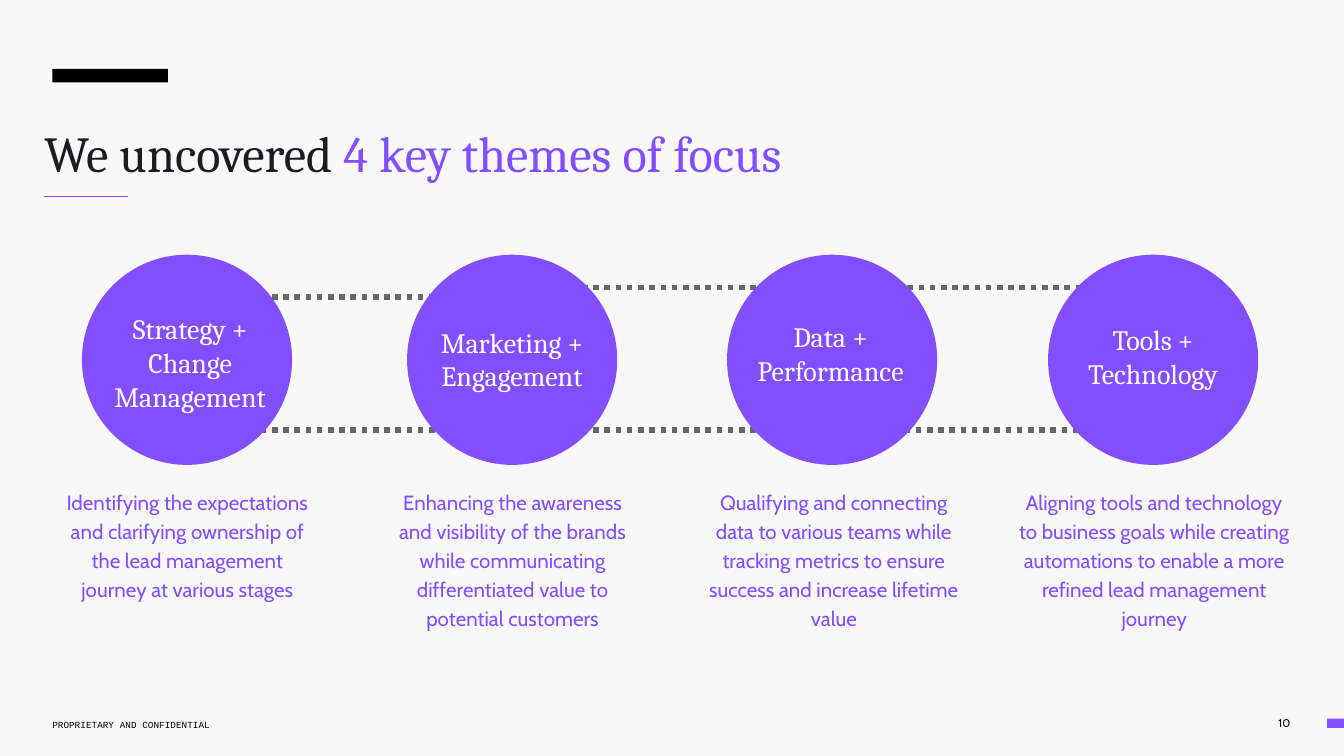
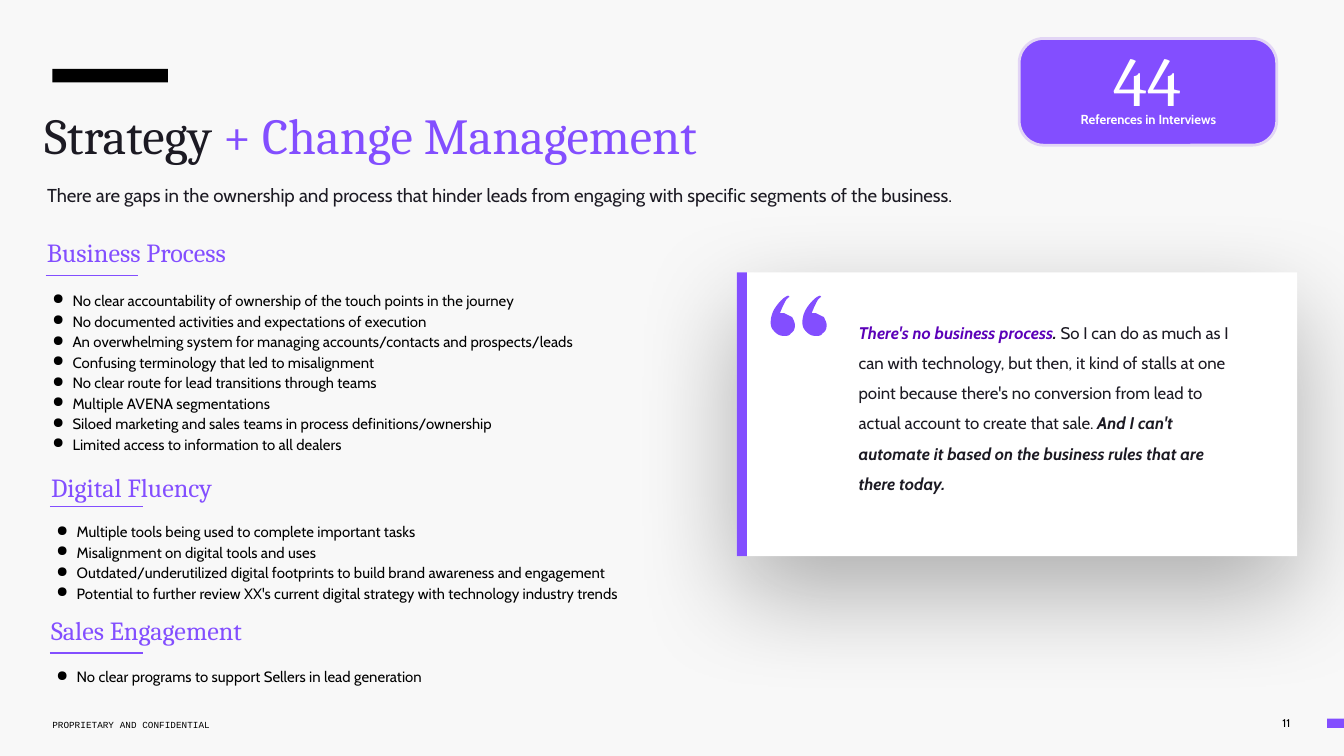
from dataclasses import dataclass, field
from typing import NamedTuple, Optional

from lxml import etree
from pptx import Presentation
from pptx import util as u
from pptx.dml.color import RGBColor
from pptx.enum import dml, shapes, text
from pptx.oxml import ns

Pt = u.Pt
SHAPE = shapes.MSO_SHAPE
ALIGN = text.PP_ALIGN


@dataclass(frozen=True)
class Theme:
    """Colours, fonts and type sizes of the deck."""
    paper: str = "F8F8F8"
    white: str = "FFFFFF"
    black: str = "000000"
    ink: str = "1C1A23"
    violet: str = "834EFF"
    deep_violet: str = "5B00B8"
    pale_violet: str = "E2D5F5"
    grey: str = "666666"
    serif: str = "Cambria"
    sans: str = "Cabin"
    mono: str = "Courier New"
    count: float = 37
    title: float = 27
    theme_name: float = 15
    heading: float = 14
    caption: float = 11
    lead: float = 10
    quote: float = 9
    bullet: float = 8
    badge: float = 7
    page: float = 6
    footer: float = 5


T = Theme()


class Box(NamedTuple):
    left: float
    top: float
    width: float
    height: float


class Run(NamedTuple):
    words: str
    size: float
    color: str
    font: str = T.sans
    strong: bool = False
    slanted: bool = False


@dataclass(frozen=True)
class Layout:
    """How the text sits in its box."""
    spacing: float = 1.0
    align: ALIGN = ALIGN.LEFT
    inset: tuple = (0, 0, 0, 0)
    anchor: text.MSO_ANCHOR = text.MSO_ANCHOR.TOP
    bullets: bool = False


SNUG = (2.88,) * 4
ROOMY = (7.2,) * 4


@dataclass(frozen=True)
class FocusTheme:
    name: str
    label: Box
    circle_left: float
    caption: str
    caption_left: float
    caption_width: float = 136.1


@dataclass(frozen=True)
class Section:
    heading: str
    left: float
    top: float
    rule_y: float
    list_top: float
    list_height: float
    points: list = field(default_factory=list)


FOCUS_THEMES = [
    FocusTheme("Strategy + Change Management", Box(50.4, 164.2, 103, 41.8), 45.4,
               "Identifying the expectations and clarifying ownership of the lead "
               "management journey at various stages", 32.4),
    FocusTheme("Marketing + Engagement", Box(220.3, 171.4, 108, 46.8), 219.6,
               "Enhancing the awareness and visibility of the brands while communicating "
               "differentiated value to potential customers", 206.6),
    FocusTheme("Data + Performance", Box(392.4, 168.5, 105.1, 46.8), 391,
               "Qualifying and connecting data to various teams while tracking metrics to "
               "ensure success and increase lifetime value", 378.7),
    FocusTheme("Tools + Technology", Box(569.5, 169.9, 96.5, 65.5), 563,
               "Aligning tools and technology to business goals while creating automations "
               "to enable a more refined lead management journey", 545, 146.9),
]

# Dotted links between circles: start x, end x, y
DOTTED_LINKS = [
    (311.8, 579.6, 154.1), (484.6, 579.6, 230.4), (139.7, 234.7, 159.1),
    (139.7, 234.7, 230.4), (311.8, 406.8, 230.4),
]

SECTIONS = [
    Section("Business Process", 22.3, 121, 147.6, 151.9, 92.9, [
        "No clear accountability of ownership of the touch points in the journey",
        "No documented activities and expectations of execution",
        "An overwhelming system for managing accounts/contacts and prospects/leads",
        "Confusing terminology that led to misalignment",
        "No clear route for lead transitions through teams",
        "Multiple AVENA segmentations",
        "Siloed marketing and sales teams in process definitions/ownership",
        "Limited access to information to all dealers",
    ]),
    Section("Digital Fluency", 24.5, 247, 271.4, 275.8, 48.2, [
        "Multiple tools being used to complete important tasks",
        "Misalignment on digital tools and uses",
        "Outdated/underutilized digital footprints to build brand awareness and engagement",
        "Potential to further review XX's current digital strategy with technology industry trends",
    ]),
    Section("Sales Engagement", 24.5, 324, 349.9, 353.5, 15.1, [
        "No clear programs to support Sellers in lead generation",
    ]),
]

# One quotation mark in points: start, then cubic curves (six numbers) and lines (two)
MARK_START = (9.4, 0)
MARK_OUTLINE = [
    (7.2, 0.7, 5, 2.9, 2.9, 5.8), (1.4, 7.9, 0, 10.8, 0, 14.4),
    (0, 16.6, 0.7, 18, 2.2, 19.4), (3.6, 20.9, 5, 21.6, 7.2, 21.6),
    (8.6, 21.6, 10.1, 21.6, 10.8, 20.2), (12.2, 19.4, 13, 18, 13, 15.8),
    (13, 14.4, 12.2, 13, 11.5, 11.5), (10.1, 10.8, 8.6, 10.1, 7.2, 9.4),
    (5, 9.4),
    (5.8, 7.2, 6.5, 5.8, 7.2, 4.3), (7.9, 2.9, 8.6, 1.4, 10.1, 0.7),
]


def rgb(color: str) -> RGBColor:
    return RGBColor.from_string(color)


def child(parent, tag: str, **attrs: str):
    return etree.SubElement(parent, ns.qn(tag), attrs)


def add_bullet(p) -> None:
    pPr = p._p.get_or_add_pPr()
    pPr.set("marL", str(Pt(13.7)))
    pPr.set("indent", str(Pt(-10.8)))
    child(child(pPr, "a:buClr"), "a:srgbClr", val=T.black)
    child(pPr, "a:buChar", char="●")


def add_text(s, box: Box, paragraphs: list[list[Run]], layout: Layout = Layout()) -> None:
    tf = s.shapes.add_textbox(*map(Pt, box)).text_frame
    left, top, right, bottom = map(Pt, layout.inset)
    frame_format = dict(word_wrap=True, vertical_anchor=layout.anchor, margin_left=left,
                        margin_top=top, margin_right=right, margin_bottom=bottom)
    for name, value in frame_format.items():
        setattr(tf, name, value)
    for i, runs in enumerate(paragraphs):
        p = tf.add_paragraph() if i else tf.paragraphs[0]
        p.alignment = layout.align
        p.line_spacing = layout.spacing
        if layout.bullets:
            add_bullet(p)
        for run in runs:
            r = p.add_run()
            r.text = run.words
            font_format = dict(name=run.font, size=Pt(run.size), bold=run.strong,
                               italic=run.slanted)
            for name, value in font_format.items():
                setattr(r.font, name, value)
            r.font.color.rgb = rgb(run.color)


def paint(sp, fill: str, line: Optional[str] = None, weight: float = 0) -> None:
    sp.shadow.inherit = False
    sp.fill.solid()
    sp.fill.fore_color.rgb = rgb(fill)
    if line:
        sp.line.color.rgb = rgb(line)
        sp.line.width = Pt(weight)
    else:
        sp.line.fill.background()


def add_block(s, kind: SHAPE, box: Box, fill: str, line: Optional[str] = None,
              weight: float = 0):
    sp = s.shapes.add_shape(kind, *map(Pt, box))
    paint(sp, fill, line, weight)
    return sp


def add_rule(s, x1: float, x2: float, y: float, color: str, weight: float,
             dotted: bool = False) -> None:
    ends = map(Pt, (x1, y, x2, y))
    c = s.shapes.add_connector(shapes.MSO_CONNECTOR.STRAIGHT, *ends)
    c.line.color.rgb = rgb(color)
    c.line.width = Pt(weight)
    if dotted:
        c.line.dash_style = dml.MSO_LINE.ROUND_DOT
    child(c._element.spPr, "a:effectLst")


def add_soft_shadow(sp) -> None:
    effects = sp._element.spPr.find(ns.qn("a:effectLst"))
    shadow = child(effects, "a:outerShdw", blurRad=str(Pt(57.4)), dist=str(Pt(20.2)),
                   dir="5400000", algn="t", rotWithShape="0")
    child(child(shadow, "a:srgbClr", val=T.black), "a:alpha", val="30000")


def mark_points(steps: int = 8) -> list[tuple[float, float]]:
    """Flatten the quotation mark's curves into short straight pieces."""
    points = [MARK_START]
    for piece in MARK_OUTLINE:
        if len(piece) == 2:
            points.append(piece)
            continue
        controls = [points[-1], piece[:2], piece[2:4], piece[4:]]
        for t in (i / steps for i in range(1, steps + 1)):
            weights = ((1 - t) ** 3, 3 * t * (1 - t) ** 2, 3 * t * t * (1 - t), t ** 3)
            points.append(tuple(sum(w * c[axis] for w, c in zip(weights, controls))
                                for axis in (0, 1)))
    return points


def add_quote_marks(s, left: float, top: float, gap: float) -> None:
    outlines = [[(Pt(left + shift + x), Pt(top + y)) for x, y in mark_points()]
                for shift in (0, gap)]
    first, second = outlines
    builder = s.shapes.build_freeform(*first[0])
    builder.add_line_segments(first[1:], close=True)
    builder.move_to(*second[0])
    builder.add_line_segments(second[1:], close=True)
    paint(builder.convert_to_shape(), T.violet)


def add_base(prs, page: int, title_top: float, dark: str, bright: str):
    """Start a slide with background, logo bar, footer and two-tone title."""
    s = prs.slides.add_slide(prs.slide_layouts[6])
    s.background.fill.solid()
    s.background.fill.fore_color.rgb = rgb(T.paper)
    middle = text.MSO_ANCHOR.MIDDLE
    add_block(s, SHAPE.RECTANGLE, Box(28, 37, 62, 7.2), T.black)
    add_block(s, SHAPE.RECTANGLE, Box(711, 385, 9, 5), T.violet)
    add_text(s, Box(637.2, 381, 59, 13), [[Run(str(page), T.page, T.black)]],
             Layout(align=ALIGN.RIGHT, inset=(5, 2.88, 5, 2.88), anchor=middle))
    add_text(s, Box(28, 382.3, 157, 10.8),
             [[Run("PROPRIETARY AND CONFIDENTIAL", T.footer, T.black, T.mono)]],
             Layout(1.15, anchor=middle))
    add_text(s, Box(23.8, title_top, 540, 41.8),
             [[Run(dark, T.title, T.ink, T.serif), Run(bright, T.title, T.violet, T.serif)]],
             Layout(0.97))
    return s


def build_themes(prs) -> None:
    s = add_base(prs, 10, 67, "We uncovered ", "4 key themes of focus")
    add_rule(s, 23.8, 68.4, 105.3, T.violet, 1)
    for x1, x2, y in DOTTED_LINKS:
        add_rule(s, x1, x2, y, T.grey, 3, dotted=True)
    for theme in FOCUS_THEMES:
        add_block(s, SHAPE.OVAL, Box(theme.circle_left, 138, 109.6, 109.6),
                  T.violet, T.violet, 3)
        add_text(s, theme.label, [[Run(theme.name, T.theme_name, T.white, T.serif)]],
                 Layout(align=ALIGN.CENTER, inset=SNUG))
        add_text(s, Box(theme.caption_left, 260, theme.caption_width, 105),
                 [[Run(theme.caption, T.caption, T.violet)]],
                 Layout(1.18, ALIGN.CENTER))


def add_section(s, section: Section) -> None:
    add_text(s, Box(section.left, section.top, 188, 22.3),
             [[Run(section.heading, T.heading, T.violet, T.serif)]],
             Layout(1.15, inset=SNUG))
    rule_left = section.left + 2.2
    add_rule(s, rule_left, rule_left + 49.7, section.rule_y, T.violet, 0.75)
    add_text(s, Box(section.left, section.list_top, 360, section.list_height),
             [[Run(point, T.bullet, T.black)] for point in section.points],
             Layout(1.15, inset=SNUG, bullets=True))


def add_quote_card(s) -> None:
    card = Box(394.8, 146, 300.2, 152)
    add_soft_shadow(add_block(s, SHAPE.RECTANGLE, card, T.white))
    add_block(s, SHAPE.RECTANGLE, card._replace(width=5.3), T.violet)
    add_quote_marks(s, 412.9, 158.4, 17)
    add_text(s, Box(460, 165, 212.4, 117.4), [[
        Run("There's no business process", T.quote, T.deep_violet, strong=True, slanted=True),
        Run(".", T.quote, T.ink, strong=True, slanted=True),
        Run(" So I can do as much as I can with technology, but then, it kind of stalls at "
            "one point because there's no conversion from lead to actual account to create "
            "that sale. ", T.quote, T.ink),
        Run("And I can't automate it based on the business rules that are there today.",
            T.quote, T.ink, strong=True, slanted=True),
    ]], Layout(1.5, inset=(0, 2.2, 13, 2.2)))


def add_count_badge(s) -> None:
    badge = add_block(s, SHAPE.ROUNDED_RECTANGLE, Box(546, 20.6, 138, 57.2),
                      T.violet, T.pale_violet, 1.5)
    badge.adjustments[0] = 0.23
    centred = Layout(align=ALIGN.CENTER, inset=ROOMY)
    add_text(s, Box(533.5, 55.4, 163.4, 23),
             [[Run("References in Interviews", T.badge, T.white, strong=True)]], centred)
    add_text(s, Box(580.3, 13, 69.1, 59), [[Run("44", T.count, T.white, T.serif)]], centred)


def build_strategy(prs) -> None:
    s = add_base(prs, 11, 57.6, "Strategy ", "+ Change Management")
    add_text(s, Box(22.3, 93.6, 618.5, 17.3), [[Run(
        "There are gaps in the ownership and process that hinder leads from engaging with "
        "specific segments of the business.", T.lead, T.ink)]], Layout(1.15, inset=SNUG))
    add_quote_card(s)
    for section in SECTIONS:
        add_section(s, section)
    add_count_badge(s)


def main() -> None:
    prs = Presentation()
    prs.slide_width, prs.slide_height = Pt(720), Pt(405)
    build_themes(prs)
    build_strategy(prs)
    prs.save("out.pptx")


if __name__ == "__main__":
    main()
